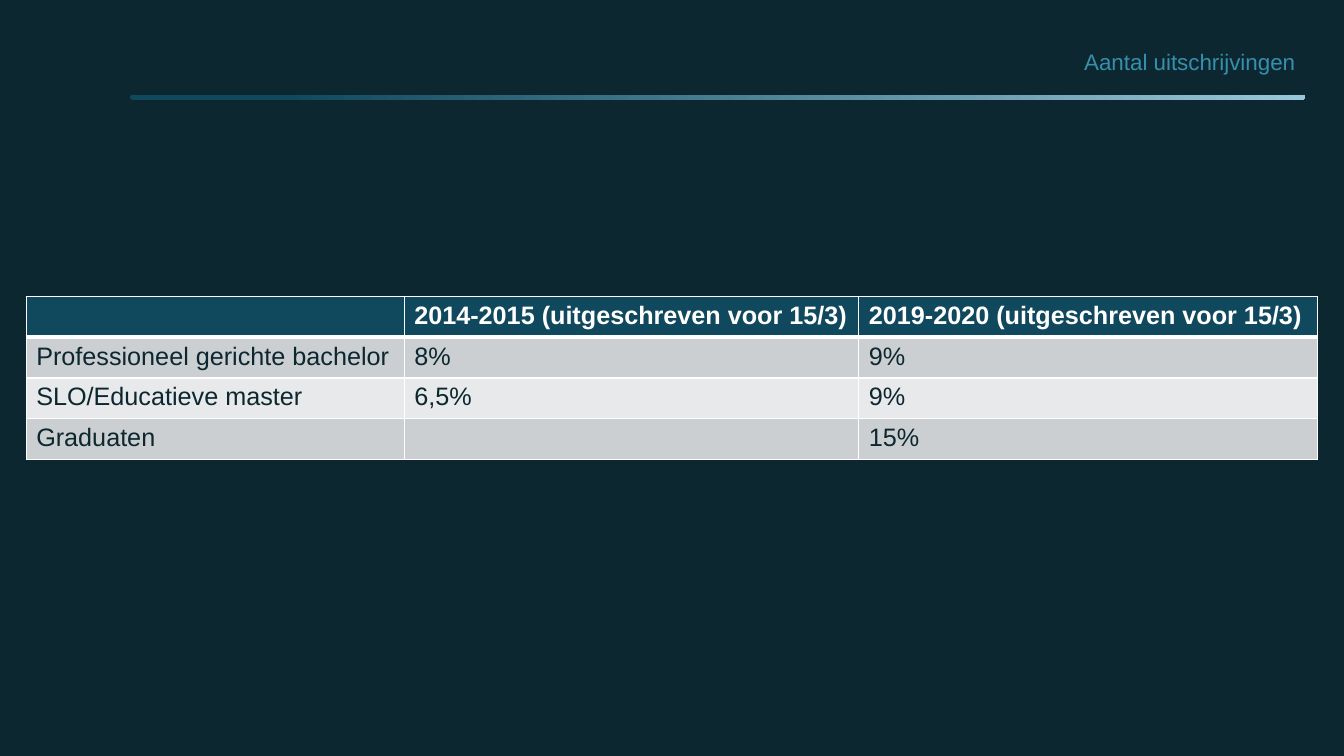
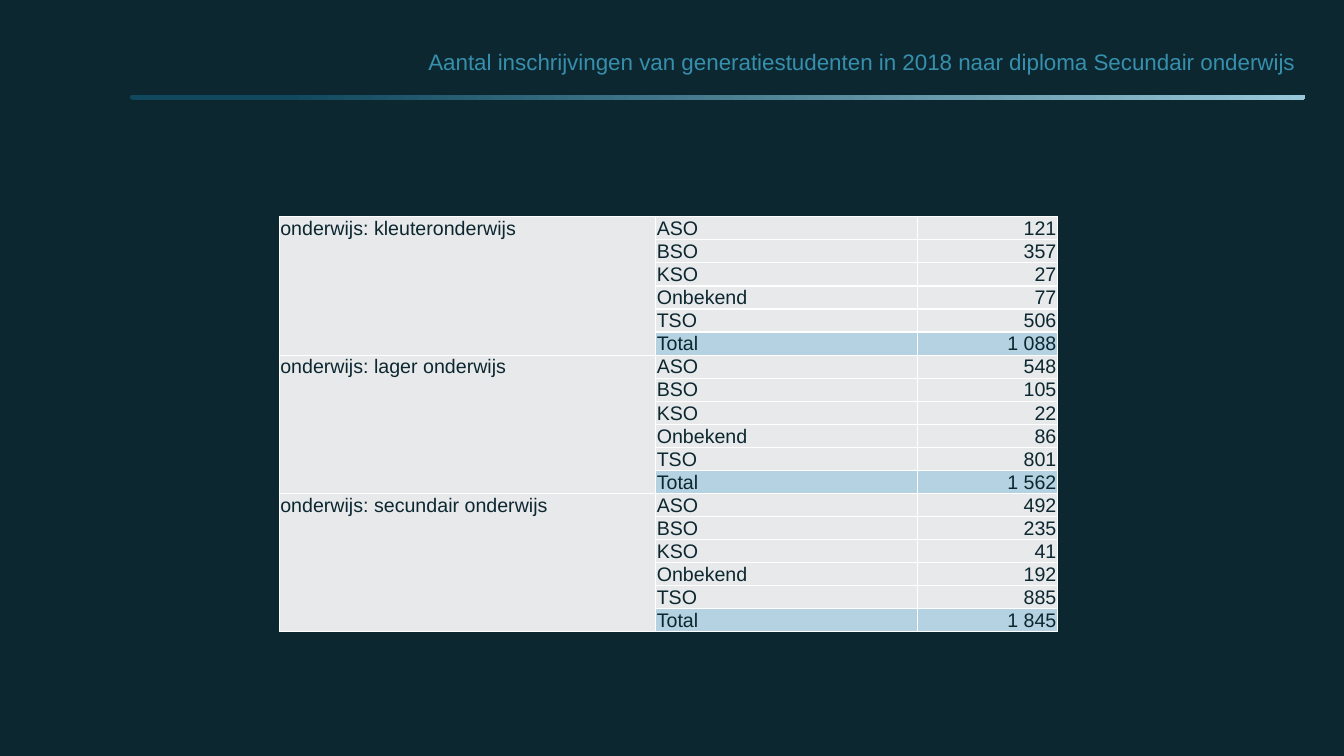
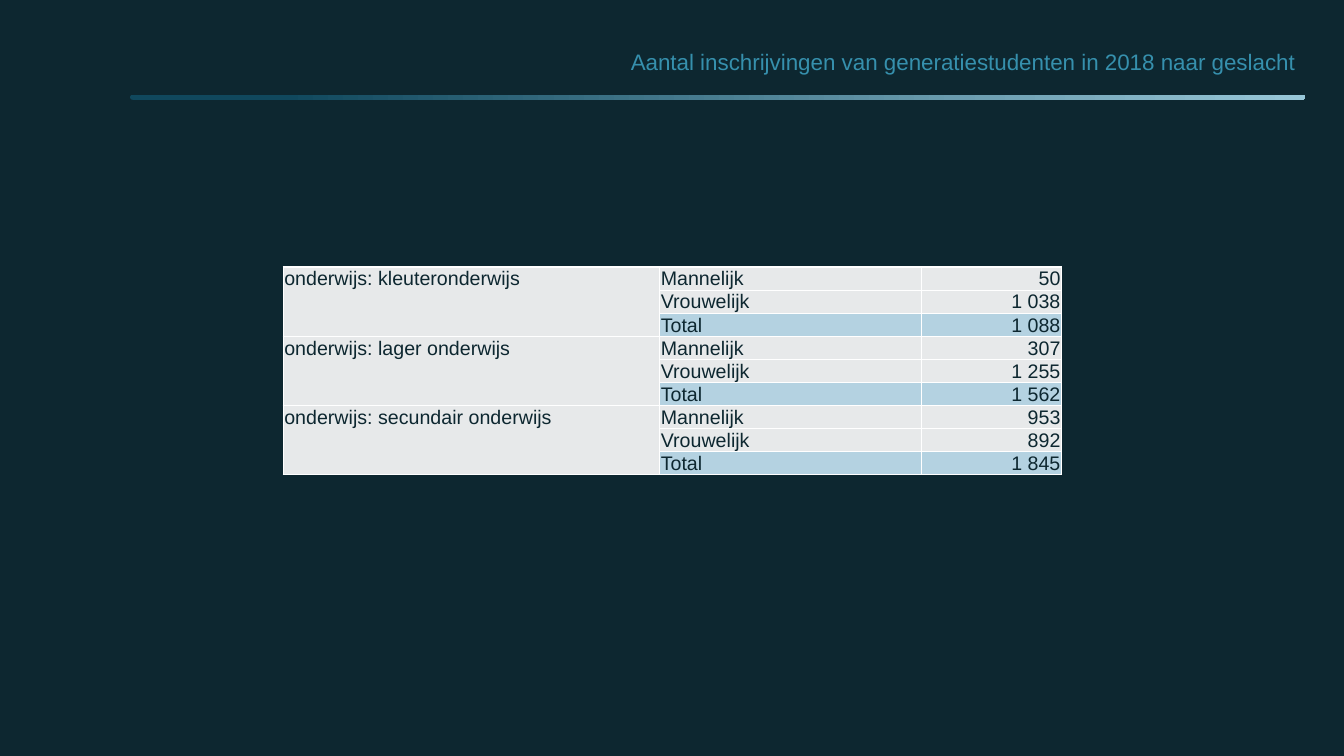
import pptx
import pptx.util
import pptx.dml.color
import pptx.enum.shapes
import pptx.enum.text
import pptx.oxml
import pptx.oxml.ns

WIDTH, HEIGHT = pptx.util.Inches(13.333), pptx.util.Inches(7.5)
FONT = "Arial"
INK, TEAL, SKY = "0D2730", "10485D", "97C7D8"
TITLE, WHITE = "3690AD", "FFFFFF"
PALE, GREY, TOTAL = "E7E9EA", "CCCFD2", "B4D2E1"
LEFT, RIGHT = pptx.enum.text.PP_ALIGN.LEFT, pptx.enum.text.PP_ALIGN.RIGHT

TITLE_BOX = (16.28, 4.13, 80.85, 8.4)
BAND_BOX = (9.68, 12.53, 87.45, 0.67)
GROUPS = ["kleuteronderwijs", "lager onderwijs", "secundair onderwijs"]


def rgb(code):
    return pptx.dml.color.RGBColor.from_string(code)


def across(share):
    return round(WIDTH * share / 100)


def down(share):
    return round(HEIGHT * share / 100)


def place(box):
    x, y, w, h = box
    return across(x), down(y), across(w), down(h)


def style(p, size, color, bold=False, align=LEFT):
    p.alignment = align
    p.font.name = FONT
    p.font.size = pptx.util.Pt(size)
    p.font.bold = bold
    p.font.color.rgb = rgb(color)


def add_band(slide, box):
    sp = slide.shapes.add_shape(
        pptx.enum.shapes.MSO_SHAPE.ROUNDED_RECTANGLE, *place(box))
    sp.adjustments[0] = 0.5
    sp.shadow.inherit = False
    sp.line.fill.background()
    sp.fill.gradient()
    sp.fill.gradient_angle = 0
    for stop, position, color in zip(sp.fill.gradient_stops, (0.13, 1), (TEAL, SKY)):
        stop.position = position
        stop.color.rgb = rgb(color)


def add_titled_slide(prs, title):
    slide = prs.slides.add_slide(prs.slide_layouts[5])
    add_band(slide, BAND_BOX)
    sp = slide.shapes.title
    sp.left, sp.top, sp.width, sp.height = place(TITLE_BOX)
    tf = sp.text_frame
    tf.text = title
    tf.vertical_anchor = pptx.enum.text.MSO_ANCHOR.MIDDLE
    tf.paragraphs[0].line_spacing = 0.9
    style(tf.paragraphs[0], 16, TITLE, align=RIGHT)
    return slide


def set_borders(cell, top=1, bottom=1):
    tc_pr = cell._tc.get_or_add_tcPr()
    for side, width in (("L", 1), ("R", 1), ("T", top), ("B", bottom)):
        tc_pr.append(pptx.oxml.parse_xml(
            f'<a:ln{side} {pptx.oxml.ns.nsdecls("a")} w="{pptx.util.Pt(width)}">'
            f'<a:solidFill><a:srgbClr val="{WHITE}"/></a:solidFill></a:ln{side}>'))


def fill_cell(cell, text, fill, size, color=INK, bold=False, align=LEFT, **borders):
    set_borders(cell, **borders)
    cell.fill.solid()
    cell.fill.fore_color.rgb = rgb(fill)
    cell.text = text
    style(cell.text_frame.paragraphs[0], size, color, bold, align)


def add_grid(slide, box, weights, row_count):
    x, y, w, row_height = box
    frame = slide.shapes.add_table(
        row_count, len(weights), *place((x, y, w, row_height * row_count)))
    table = frame.table
    table.first_row = table.horz_banding = False
    for column, weight in zip(table.columns, weights):
        column.width = across(w * weight / sum(weights))
    return table


def add_banded_table(slide, box, weights, rows):
    table = add_grid(slide, box, weights, len(rows))
    for i, row in enumerate(rows):
        for j, text in enumerate(row):
            cell = table.cell(i, j)
            if i == 0:
                fill_cell(cell, text, TEAL, 18, WHITE, True, bottom=3)
            else:
                fill_cell(cell, text, GREY if i % 2 else PALE, 18,
                          top=3 if i == 1 else 1)


def add_grouped_table(slide, box, weights, labels, values):
    span = len(labels)
    table = add_grid(slide, box, weights, span * len(GROUPS))
    for g, (group, counts) in enumerate(zip(GROUPS, values)):
        first = g * span
        for i, (label, count) in enumerate(zip(labels, counts)):
            fill = TOTAL if label == "Total" else PALE
            heading = "" if i else f"onderwijs: {group}"
            fill_cell(table.cell(first + i, 0), heading, PALE, 14)
            fill_cell(table.cell(first + i, 1), label, fill, 14)
            fill_cell(table.cell(first + i, 2), count, fill, 14, align=RIGHT)
        table.cell(first, 0).merge(table.cell(first + span - 1, 0))
    for cell in table.iter_cells():
        cell.margin_left = cell.margin_right = cell.margin_top = pptx.util.Inches(0.01)
        cell.margin_bottom = 0


def main():
    prs = pptx.Presentation()
    prs.slide_width, prs.slide_height = WIDTH, HEIGHT
    background = prs.slide_master.background.fill
    background.solid()
    background.fore_color.rgb = rgb(INK)

    slide = add_titled_slide(prs, "Aantal uitschrijvingen")
    add_banded_table(slide, (1.95, 39.2, 96.08, 5.4), (3.75, 4.51, 4.55), [
        ("", "2014-2015 (uitgeschreven voor 15/3)", "2019-2020 (uitgeschreven voor 15/3)"),
        ("Professioneel gerichte bachelor", "8%", "9%"),
        ("SLO/Educatieve master", "6,5%", "9%"),
        ("Graduaten", "", "15%"),
    ])

    group_weights = (3.74, 2.6, 1.39)
    enrolment = "Aantal inschrijvingen van generatiestudenten in 2018 naar "
    slide = add_titled_slide(prs, enrolment + "diploma Secundair onderwijs")
    add_grouped_table(
        slide, (20.78, 28.67, 57.9, 2.93), group_weights,
        ("ASO", "BSO", "KSO", "Onbekend", "TSO", "Total"),
        [("121", "357", "27", "77", "506", "1 088"),
         ("548", "105", "22", "86", "801", "1 562"),
         ("492", "235", "41", "192", "885", "1 845")])

    slide = add_titled_slide(prs, enrolment + "geslacht")
    add_grouped_table(
        slide, (21.08, 35.33, 57.9, 2.93), group_weights,
        ("Mannelijk", "Vrouwelijk", "Total"),
        [("50", "1 038", "1 088"),
         ("307", "1 255", "1 562"),
         ("953", "892", "1 845")])

    prs.save("out.pptx")


if __name__ == "__main__":
    main()
